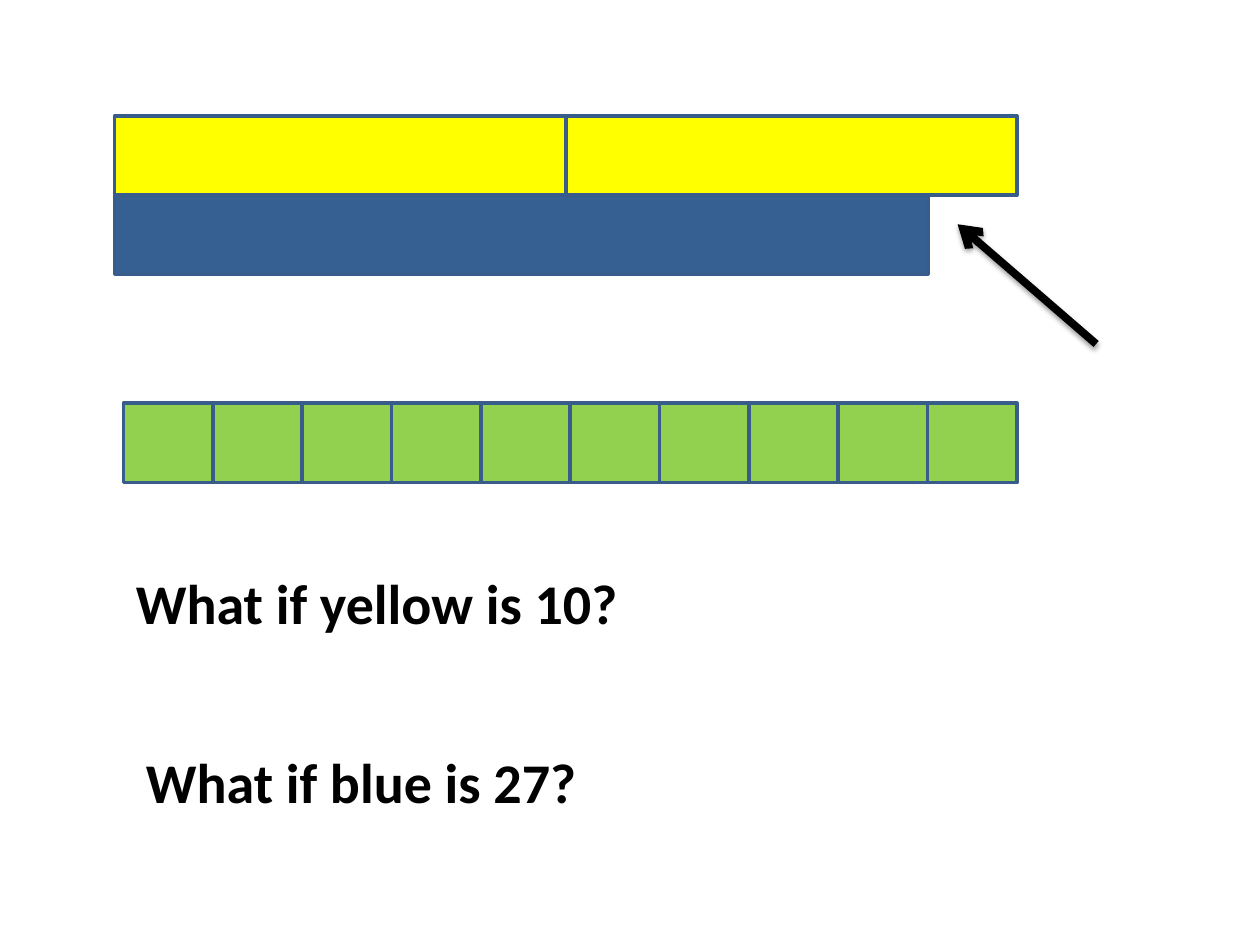
from lxml import etree
from pptx import Presentation
from pptx import util as u
from pptx.dml.color import RGBColor
from pptx.enum import shapes, text
from pptx.oxml.ns import qn

# Content: left, top, cell width, cell count, fill
TALL = 0.63
BARS = [
    (0.91, 1.55, 6.46, 1, "376092"),
    (0.91, 0.92, 3.58, 2, "FFFF00"),
]
UNITS = (0.98, 3.2, 0.709, 10, "92D050")
ASKS = [
    ("What if yellow is 10?", 0.98, 4.46, 4.06),
    ("What if blue is 27?", 1.06, 5.88, 3.65),
]
ARROW = (8.7, 2.73, 7.6, 1.78)


def inch(*vals):
    return [u.Inches(v) for v in vals]


def hue(code):
    return RGBColor.from_string(code)


def add_row(parent, left, top, wide, count, fill):
    for i in range(count):
        cell = parent.add_shape(shapes.MSO_SHAPE.RECTANGLE,
                                *inch(left + i * wide, top, wide, TALL))
        cell.shadow.inherit = False
        cell.fill.solid()
        cell.fill.fore_color.rgb = hue(fill)
        cell.line.color.rgb = hue("385D8A")
        cell.line.width = u.Pt(2)


def add_text(words, left, top, wide, tall=0.64, size=32, bold=True,
             font="Calibri", color="000000"):
    frame = slide.shapes.add_textbox(*inch(left, top, wide, tall)).text_frame
    frame.word_wrap = False
    frame.auto_size = text.MSO_AUTO_SIZE.SHAPE_TO_FIT_TEXT
    run = frame.paragraphs[0].add_run()
    run.text = words
    run.font.size = u.Pt(size)
    run.font.bold = bold
    run.font.name = font
    run.font.color.rgb = hue(color)


def add_arrow(ends, color="000000", width=4.5):
    line = slide.shapes.add_connector(shapes.MSO_CONNECTOR.STRAIGHT, *inch(*ends))
    line.line.color.rgb = hue(color)
    line.line.width = u.Pt(width)
    props = line._element.spPr
    etree.SubElement(props.find(qn("a:ln")), qn("a:tailEnd"), type="arrow")
    # Soft shadow straight below
    effects = etree.SubElement(props, qn("a:effectLst"))
    shade = etree.SubElement(effects, qn("a:outerShdw"), dir=str(90 * 60000),
                             blurRad=str(u.Pt(3.1)), dist=str(u.Pt(1.6)),
                             rotWithShape="0")
    tint = etree.SubElement(shade, qn("a:srgbClr"), val=color)
    etree.SubElement(tint, qn("a:alpha"), val="38000")


deck = Presentation()
deck.slide_width, deck.slide_height = inch(10, 7.5)
slide = deck.slides.add_slide(deck.slide_layouts[6])

# Yellow and blue bars, grouped
group = slide.shapes.add_group_shape()
for bar in BARS:
    add_row(group.shapes, *bar)

# Green units
add_row(slide.shapes, *UNITS)

# Questions
for ask in ASKS:
    add_text(*ask)

# Arrow to the gap
add_arrow(ARROW)

deck.save("out.pptx")
